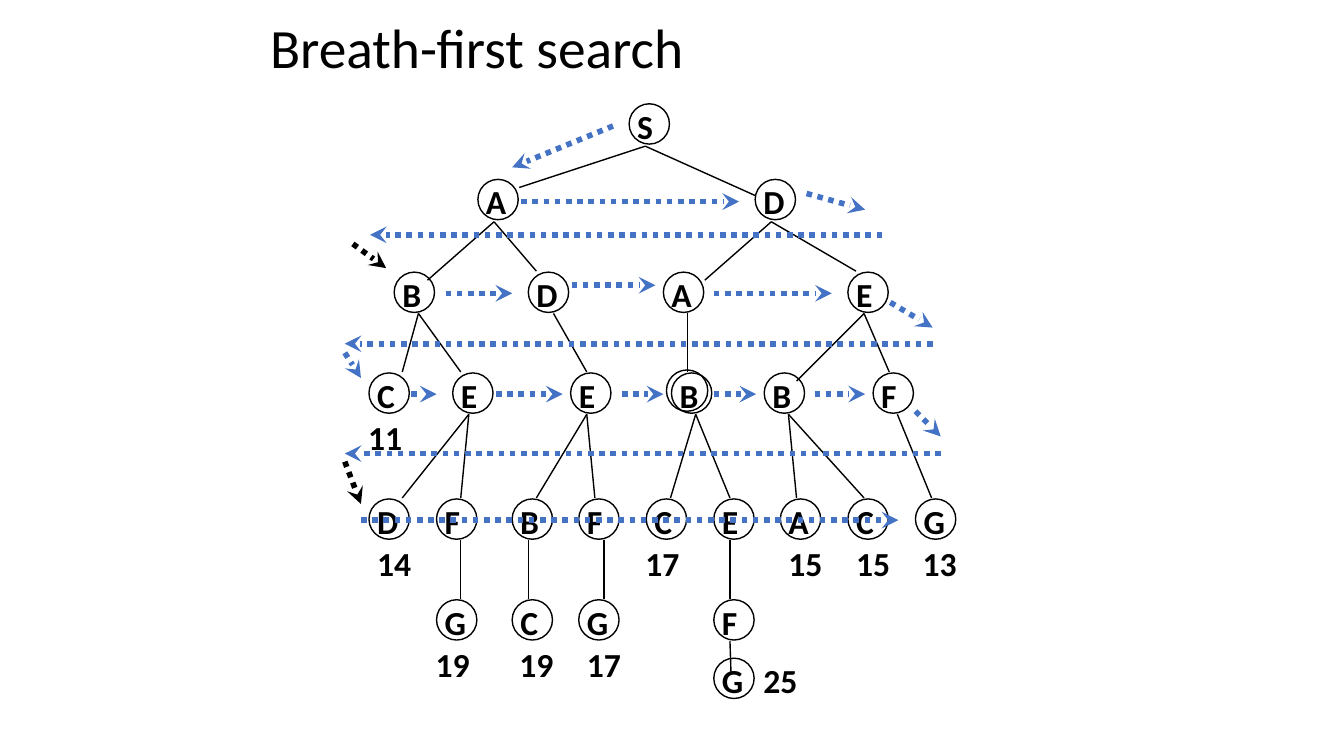
from lxml import etree
from pptx import Presentation
from pptx.dml.color import RGBColor
from pptx.enum.dml import MSO_LINE
from pptx.enum.shapes import MSO_CONNECTOR, MSO_SHAPE
from pptx.enum.text import MSO_ANCHOR, MSO_AUTO_SIZE
from pptx.oxml.ns import qn
from pptx.util import Inches, Pt

COLORS = {"black": "000000", "blue": "4472C4"}
NODE_SIZE = 0.4

deck = Presentation()
deck.slide_width, deck.slide_height = Inches(13.33), Inches(7.5)
page = deck.slides.add_slide(deck.slide_layouts[6])


def add_text(text, x, y, width, height=0.4, size=24, bold=True, spacing=0.85,
             inset=(0.07, 0.03), wrap=False, anchor=MSO_ANCHOR.TOP,
             fit=MSO_AUTO_SIZE.SHAPE_TO_FIT_TEXT):
    box = page.shapes.add_textbox(Inches(x), Inches(y), Inches(width), Inches(height))
    frame = box.text_frame
    frame.word_wrap = wrap
    frame.auto_size = fit
    frame.vertical_anchor = anchor
    frame.margin_left = frame.margin_right = Inches(inset[0])
    frame.margin_top = frame.margin_bottom = Inches(inset[1])
    para = frame.paragraphs[0]
    para.line_spacing = spacing
    span = para.add_run()
    span.text = text
    span.font.name = "Calibri"
    span.font.size = Pt(size)
    span.font.bold = bold
    span.font.color.rgb = RGBColor.from_string(COLORS["black"])


def add_line(start, end, color="black", width=1, arrow=False):
    line = page.shapes.add_connector(
        MSO_CONNECTOR.STRAIGHT, *(Inches(value) for value in (*start, *end)))
    line.line.color.rgb = RGBColor.from_string(COLORS[color])
    line.line.width = Pt(width)
    if arrow:
        line.line.dash_style = MSO_LINE.ROUND_DOT
        outline = line.line._get_or_add_ln()
        etree.SubElement(outline, qn("a:tailEnd"), type="stealth")
    etree.SubElement(line._element.spPr, qn("a:effectLst"))


# Title
add_text("Breath-first search", 2.58, 0.17, 8.25, height=0.67, size=39.6, bold=False,
         spacing=0.9, inset=(0.1, 0.05), wrap=True, anchor=MSO_ANCHOR.MIDDLE,
         fit=MSO_AUTO_SIZE.NONE)

# Tree levels: top of the circles, then letter and left edge of each node
levels = [
    (1.03, [("S", 6.24)]),
    (1.78, [("A", 4.74), ("D", 7.49)]),
    (2.7, [("B", 3.91), ("D", 5.24), ("A", 6.58), ("E", 8.41)]),
    (3.7, [("C", 3.66), ("E", 4.49), ("E", 5.66), ("B", 6.66), ("B", 7.58), ("F", 8.66)]),
    (4.95, [("D", 3.66), ("F", 4.33), ("B", 5.08), ("F", 5.74), ("C", 6.41),
            ("E", 7.08), ("A", 7.74), ("C", 8.41), ("G", 9.08)]),
    (5.95, [("G", 4.33), ("C", 5.08), ("G", 5.74), ("F", 7.08)]),
    (6.53, [("G", 7.08)]),
]
nodes = [(letter, x, y) for y, row in levels for letter, x in row]
circles = [(x, y, NODE_SIZE) for _, x, y in nodes]
circles.append((6.61, 3.67, 0.41))  # second ring around the middle B

for x, y, size in circles:
    circle = page.shapes.add_shape(
        MSO_SHAPE.OVAL, Inches(x), Inches(y), Inches(size), Inches(size))
    circle.shadow.inherit = False
    circle.fill.background()
    circle.line.color.rgb = RGBColor.from_string(COLORS["black"])
    circle.line.width = Pt(1)

# Branches: foot of the parent, then the ends at its children
branches = [
    ((6.4, 1.45), [(5.15, 1.86), (7.49, 1.94)]),
    ((4.9, 2.2), [(4.24, 2.78), (5.32, 2.69)]),
    ((7.65, 2.2), [(6.99, 2.78), (8.49, 2.69)]),
    ((4.15, 3.11), [(3.99, 3.69), (4.57, 3.69)]),
    ((5.49, 3.11), [(5.82, 3.69)]),
    ((6.82, 3.11), [(6.82, 3.69)]),
    ((8.57, 3.11), [(7.9, 3.78), (8.82, 3.69)]),
    ((4.65, 4.11), [(3.99, 4.94), (4.57, 4.94)]),
    ((5.82, 4.11), [(5.32, 4.94), (5.9, 4.94)]),
    ((6.9, 4.11), [(6.65, 4.94), (7.24, 4.94)]),
    ((7.82, 4.11), [(7.9, 4.94), (8.57, 4.94)]),
    ((8.9, 4.11), [(9.24, 4.94)]),
    *(((x, 5.36), [(x, 5.94)]) for x in (4.57, 5.24, 5.99, 7.24)),
    ((7.24, 6.36), [(7.25, 6.67)]),
]
for parent, children in branches:
    for child in children:
        add_line(parent, child)

# Node letters
letter_widths = {"S": 0.3, "A": 0.34, "B": 0.33, "C": 0.32,
                 "D": 0.35, "E": 0.31, "F": 0.29, "G": 0.35}
for letter, x, y in nodes:
    add_text(letter, x + 0.01, y + 0.05, letter_widths[letter])

# Path costs
costs = [
    (4.17, [("11", 3.58)]),
    (5.42, [("14", 3.67), ("17", 6.33), ("15", 7.75), ("15", 8.42), ("13", 9.08)]),
    (6.42, [("19", 4.25), ("19", 5.08), ("17", 5.75)]),
    (6.58, [("25", 7.5)]),
]
for y, row in costs:
    for cost, x in row:
        add_text(cost, x, y, 0.48)

# Visiting order: dotted arrows running along each level
level_steps = [
    (2, [(5.17, 7.33)]),
    (2.33, [(8.75, 3.67)]),
    (2.83, [(5.67, 6.5)]),
    (2.91, [(4.42, 5.08), (7.08, 8.25)]),
    (3.41, [(9.25, 3.42)]),
    (3.91, [(4.08, 4.33), (4.92, 5.58), (6.17, 6.58), (7.08, 7.5), (8.08, 8.58)]),
    (4.5, [(9.33, 3.42)]),
    (5.16, [(3.58, 8.91)]),
]
for y, steps in level_steps:
    for start_x, end_x in steps:
        add_line((start_x, y), (end_x, y), color="blue", width=4, arrow=True)

# Visiting order: slanted arrows between levels
slanted_steps = [
    ((6.08, 1.25), (5.08, 1.66), "blue"),
    ((8, 1.92), (8.58, 2.08), "blue"),
    ((3.5, 2.42), (3.83, 2.66), "black"),
    ((8.83, 3), (9.25, 3.25), "blue"),
    ((3.42, 3.5), (3.58, 3.75), "blue"),
    ((9.08, 4.08), (9.33, 4.33), "blue"),
    ((3.42, 4.58), (3.58, 5), "black"),
]
for start, end, color in slanted_steps:
    add_line(start, end, color=color, width=4, arrow=True)

deck.save("out.pptx")
